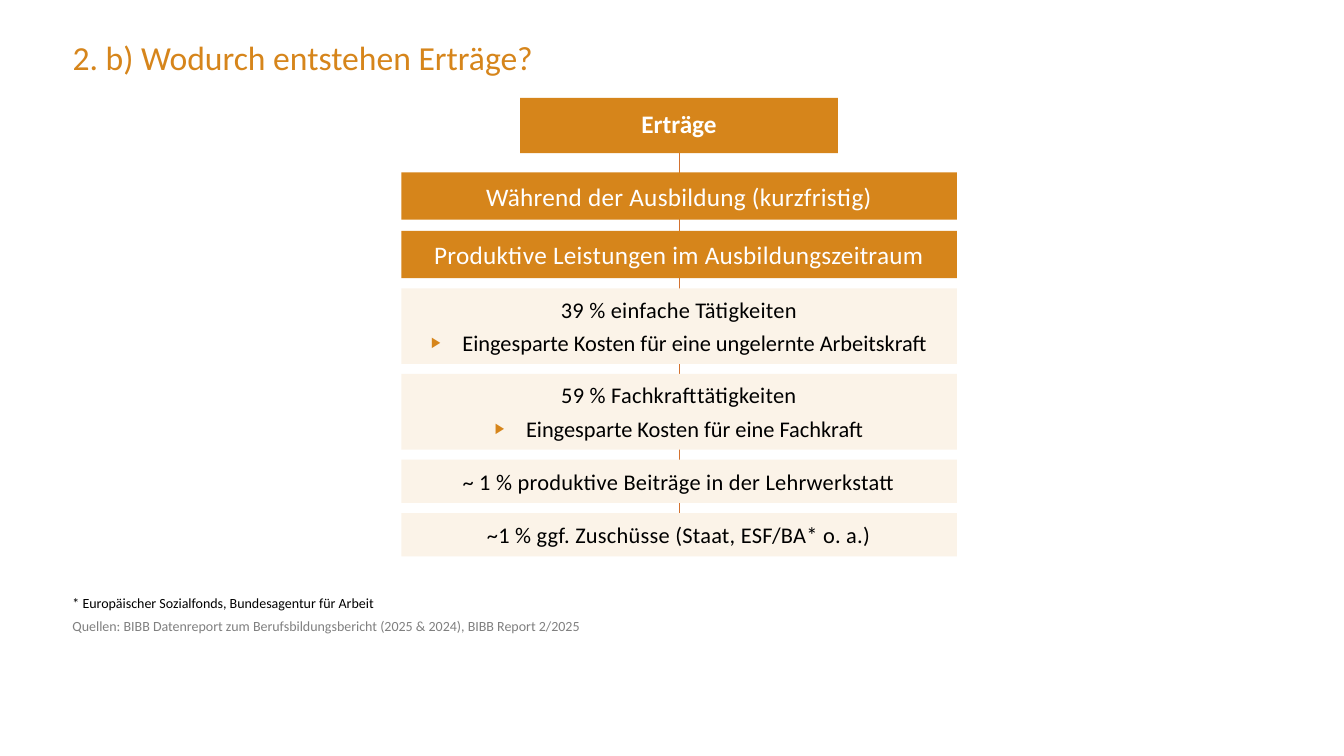
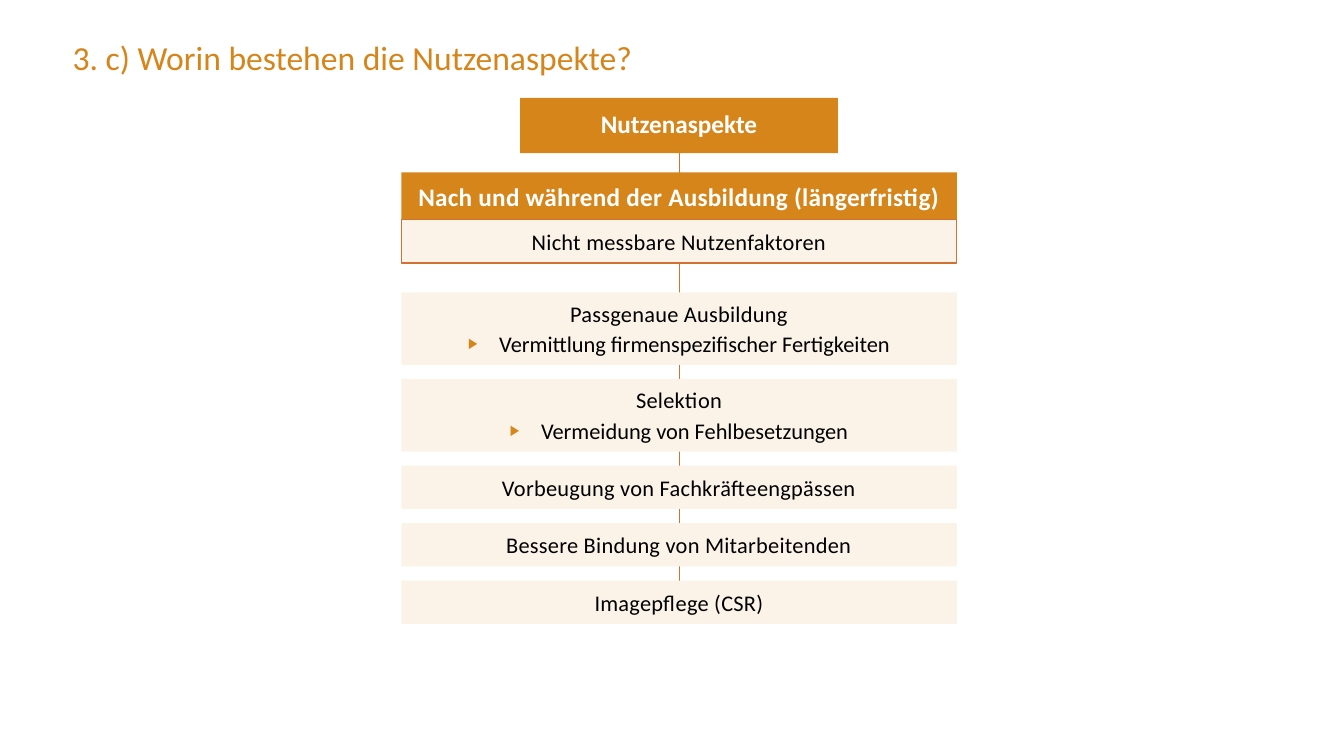
from dataclasses import dataclass

from lxml import etree
from pptx import Presentation
from pptx.dml.color import RGBColor
from pptx.enum import shapes, text
from pptx.oxml import ns
from pptx.util import Inches, Pt


@dataclass(frozen=True)
class Theme:
    font: str = "Calibri"
    main: str = "D6851B"
    pale: str = "FBF3E8"
    rule: str = "D37230"
    white: str = "FFFFFF"
    black: str = "000000"
    grey: str = "808080"
    title: int = 24
    head: int = 18
    body: int = 16
    note: int = 10


LEFT, WIDTH, TOP = 3.98, 5.51, 1.71
MID = LEFT + WIDTH / 2
BAND, ROW = 0.47, 0.43
ROOT_TOP, ROOT_W, ROOT_H = 0.97, 3.15, 0.55


class Deck:
    def __init__(self, theme):
        self.theme = theme
        self.prs = Presentation()
        self.prs.slide_width = Inches(13.33)
        self.prs.slide_height = Inches(7.5)
        self.slide = None

    def style(self, par, size, color, bold=False, track=0):
        """Format the runs of a paragraph; track is in hundredths of a point."""
        for run in par.runs:
            font = run.font
            font.name, font.size, font.bold = self.theme.font, Pt(size), bold
            font.color.rgb = RGBColor.from_string(color)
            if track:
                run._r.get_or_add_rPr().set("spc", str(track))

    def inset(self, frame, side, edge):
        frame.margin_left = frame.margin_right = Inches(side)
        frame.margin_top = frame.margin_bottom = Inches(edge)
        frame.vertical_anchor = text.MSO_ANCHOR.MIDDLE
        frame.word_wrap = True

    def start(self, title, end):
        """Add a slide with its title and the trunk line down to end."""
        self.slide = self.prs.slides.add_slide(self.prs.slide_layouts[5])
        box = self.slide.shapes.title
        box.left, box.top = Inches(0.72), Inches(0.32)
        box.width, box.height = Inches(9.84), Inches(0.49)
        frame = box.text_frame
        self.inset(frame, 0, 0)
        frame.text = title
        par = frame.paragraphs[0]
        par.alignment = text.PP_ALIGN.LEFT
        self.style(par, self.theme.title, self.theme.main)
        self.trunk(end)

    def trunk(self, end):
        line = self.slide.shapes.add_connector(
            shapes.MSO_CONNECTOR.STRAIGHT, Inches(MID),
            Inches(ROOT_TOP + ROOT_H), Inches(MID), Inches(end))
        line.line.color.rgb = RGBColor.from_string(self.theme.rule)
        line.line.width = Pt(0.5)
        etree.SubElement(line._element.spPr, ns.qn("a:effectLst"))

    def rect(self, left, top, width, height, fill, label, edge=None):
        box = self.slide.shapes.add_shape(
            shapes.MSO_SHAPE.RECTANGLE, Inches(left), Inches(top),
            Inches(width), Inches(height))
        box.shadow.inherit = False
        box.fill.solid()
        box.fill.fore_color.rgb = RGBColor.from_string(fill)
        if edge:
            box.line.color.rgb = RGBColor.from_string(edge)
            box.line.width = Pt(0.75)
        else:
            box.line.fill.background()
        frame = box.text_frame
        self.inset(frame, 0.04, 0.08)
        frame.text = label
        frame.paragraphs[0].alignment = text.PP_ALIGN.CENTER
        return frame

    def root(self, label):
        frame = self.rect(MID - ROOT_W / 2, ROOT_TOP, ROOT_W, ROOT_H,
                          self.theme.main, label)
        self.inset(frame, 0, 0)
        par = frame.paragraphs[0]
        par.line_spacing = 0.9
        self.style(par, self.theme.head, self.theme.white, True)

    def band(self, top, label, bold=False):
        frame = self.rect(LEFT, top, WIDTH, BAND, self.theme.main, label)
        self.style(frame.paragraphs[0], self.theme.head, self.theme.white,
                   bold, 20)

    def row(self, top, label, height=ROW, edge=None):
        frame = self.rect(LEFT, top, WIDTH, height, self.theme.pale, label,
                          edge)
        self.style(frame.paragraphs[0], self.theme.body, self.theme.black,
                   track=20)
        return frame

    def point(self, frame, label, before):
        par = frame.add_paragraph()
        par.text = label
        par.alignment = text.PP_ALIGN.CENTER
        props = par._p.get_or_add_pPr()
        props.set("marL", str(Inches(0.31)))
        props.set("indent", str(-Inches(0.31)))
        color = etree.SubElement(props, ns.qn("a:buClr"))
        etree.SubElement(color, ns.qn("a:srgbClr"), val=self.theme.main)
        etree.SubElement(props, ns.qn("a:buSzPct"), val="65000")
        etree.SubElement(props, ns.qn("a:buFont"), typeface=self.theme.font)
        etree.SubElement(props, ns.qn("a:buChar"), char="▶")
        par.line_spacing = Pt(22)
        par.space_before, par.space_after = Pt(before), Pt(2)
        self.style(par, self.theme.body, self.theme.black)

    def stack(self, top, gap, tall, before, items):
        """Stack rows at equal gaps; a row with a point is tall."""
        for label, detail in items:
            height = tall if detail else ROW
            frame = self.row(top, label, height)
            if detail:
                self.point(frame, detail, before)
            top += height + gap

    def note(self, top, label, color):
        box = self.slide.shapes.add_textbox(
            Inches(0.62), Inches(top), Inches(7.99), Inches(0.27))
        frame = box.text_frame
        frame.word_wrap = True
        frame.text = label
        self.style(frame.paragraphs[0], self.theme.note, color)


def gains(deck):
    deck.start("2. b) Wodurch entstehen Erträge?", 5.09)
    deck.root("Erträge")
    deck.band(TOP, "Während der Ausbildung (kurzfristig)")
    deck.band(2.29, "Produktive Leistungen im Ausbildungszeitraum")
    deck.stack(2.86, 0.1, 0.75, 2, [
        ("39 % einfache Tätigkeiten",
         "Eingesparte Kosten für eine ungelernte Arbeitskraft"),
        ("59 % Fachkrafttätigkeiten", "Eingesparte Kosten für eine Fachkraft"),
        ("~ 1 % produktive Beiträge in der Lehrwerkstatt", None),
        ("~1 % ggf. Zuschüsse (Staat, ESF/BA* o. a.)", None),
    ])
    deck.note(5.85, "* Europäischer Sozialfonds, Bundesagentur für Arbeit",
              deck.theme.black)
    deck.note(6.08, "Quellen: BIBB Datenreport zum Berufsbildungsbericht "
              "(2025 & 2024), BIBB Report 2/2025", deck.theme.grey)


def uses(deck):
    deck.start("3. c) Worin bestehen die Nutzenaspekte?", 5.77)
    deck.root("Nutzenaspekte")
    deck.band(TOP, "Nach und während der Ausbildung (längerfristig)", True)
    deck.row(TOP + BAND, "Nicht messbare Nutzenfaktoren",
             edge=deck.theme.rule)
    deck.stack(2.9, 0.14, 0.72, 0, [
        ("Passgenaue Ausbildung",
         "Vermittlung firmenspezifischer Fertigkeiten"),
        ("Selektion", "Vermeidung von Fehlbesetzungen"),
        ("Vorbeugung von Fachkräfteengpässen", None),
        ("Bessere Bindung von Mitarbeitenden", None),
        ("Imagepflege (CSR)", None),
    ])


def main():
    deck = Deck(Theme())
    gains(deck)
    uses(deck)
    deck.prs.save("out.pptx")


if __name__ == "__main__":
    main()
